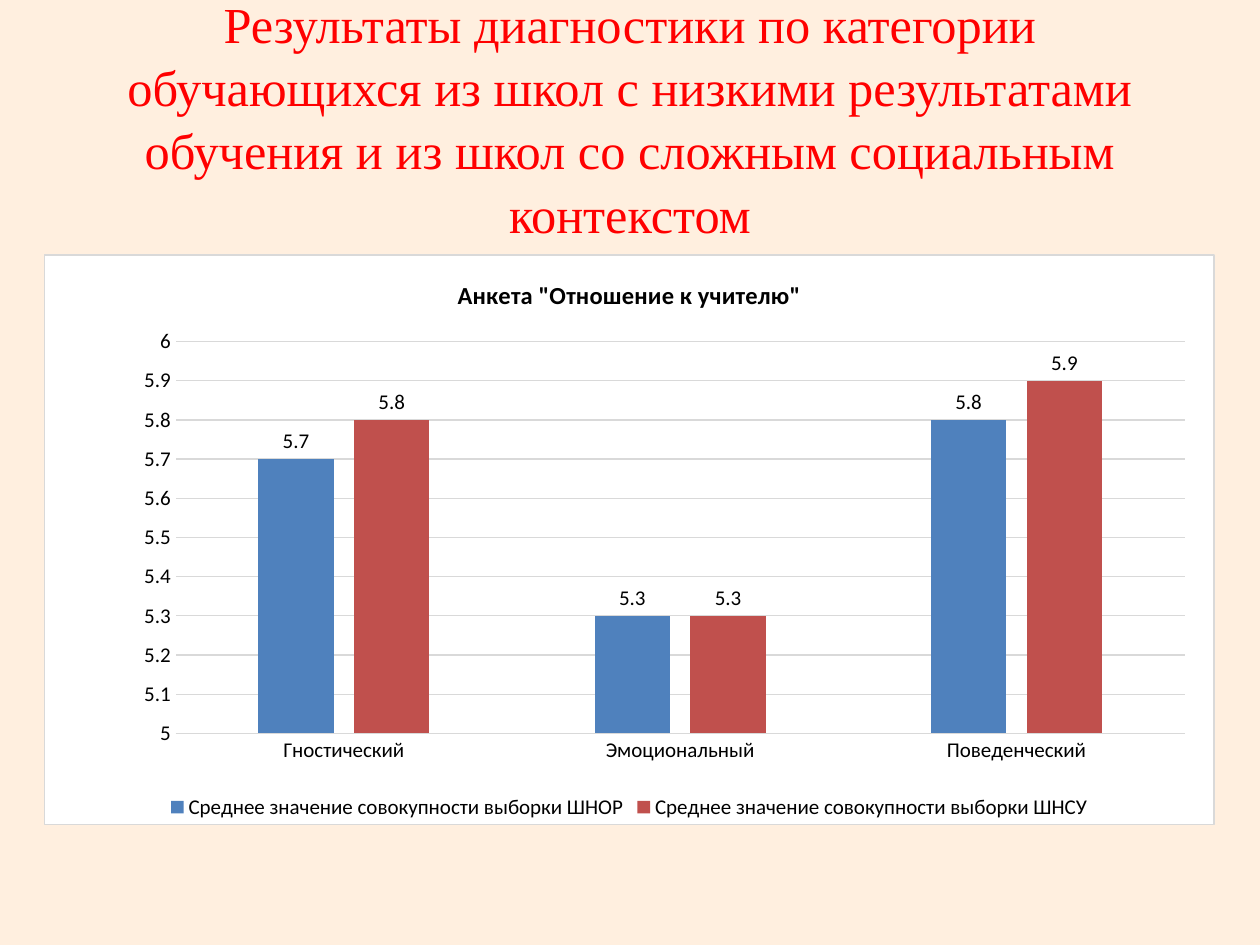
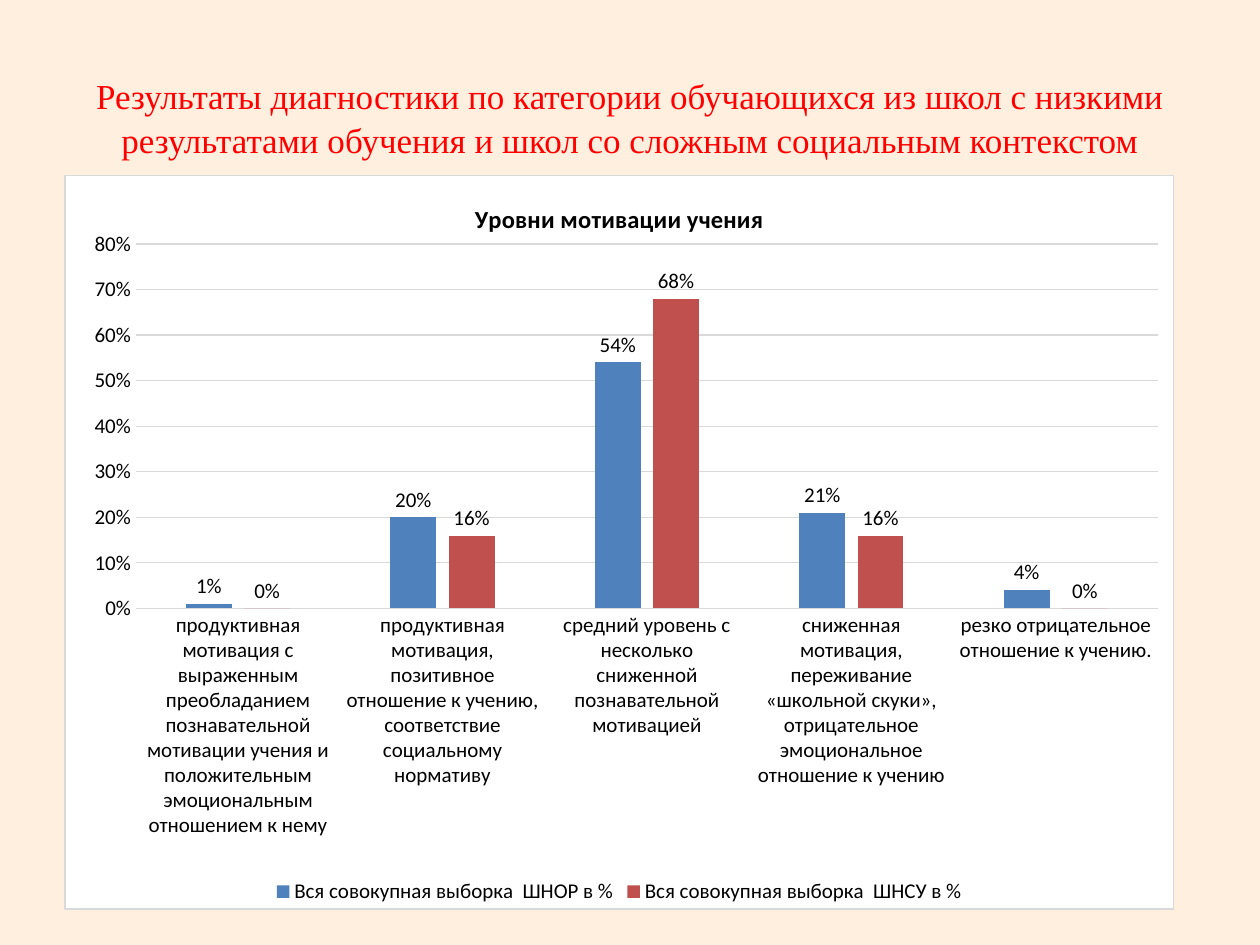
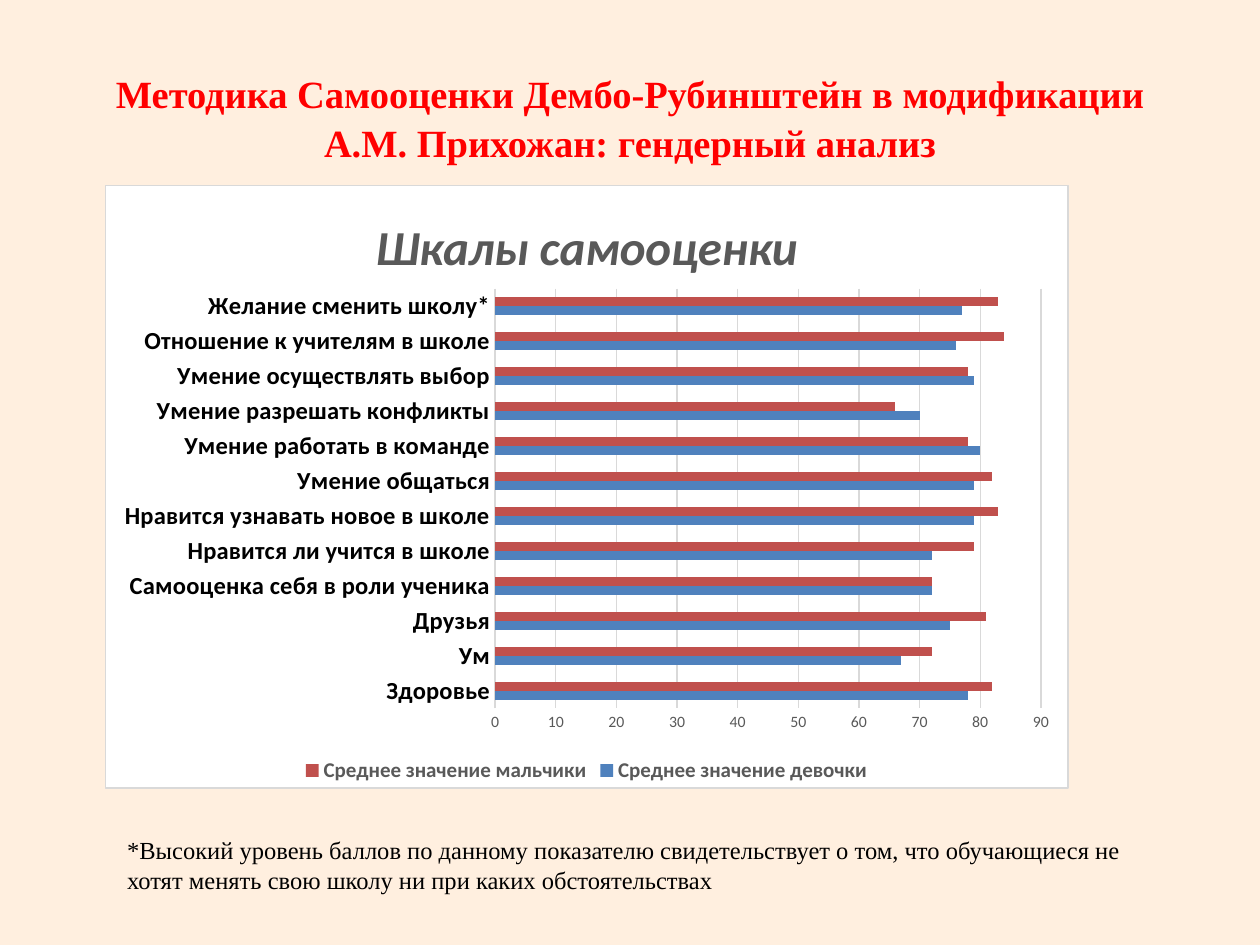
from dataclasses import dataclass

from lxml import etree
from pptx import Presentation
from pptx.chart.data import CategoryChartData
from pptx.dml.color import RGBColor
from pptx.enum import chart as kinds, text
from pptx.util import Pt

CHART_NS = "http://schemas.openxmlformats.org/drawingml/2006/chart"
DRAW_NS = "http://schemas.openxmlformats.org/drawingml/2006/main"


@dataclass(frozen=True)
class Theme:
    background: str = "FFEFDF"
    heading: str = "FF0000"
    ink: str = "000000"
    muted: str = "595959"
    rule: str = "D9D9D9"
    panel: str = "FFFFFF"
    series: tuple = ("4F81BD", "C0504D")
    text_font: str = "Times New Roman"
    chart_font: str = "Calibri"
    rule_width: float = 0.75
    long_heading: float = 28.8
    heading_small: float = 20
    heading_bold: float = 22
    note: float = 14
    chart_title: float = 14
    big_chart_title: float = 28
    chart_text: float = 12
    scale_names: float = 14
    small_ticks: float = 9


THEME = Theme()


def style(font, size, color=THEME.ink, name=THEME.chart_font, bold=False, italic=False):
    font.name, font.size = name, Pt(size)
    font.bold, font.italic = bold, italic
    font.color.rgb = RGBColor.from_string(color)


def add_slide(deck):
    slide = deck.slides.add_slide(deck.slide_layouts[6])
    fill = slide.background.fill
    fill.solid()
    fill.fore_color.rgb = RGBColor.from_string(THEME.background)
    return slide


def add_text(slide, box, words, size, color=THEME.ink, bold=False):
    frame = slide.shapes.add_textbox(*map(Pt, box)).text_frame
    frame.word_wrap = True
    paragraph = frame.paragraphs[0]
    run = paragraph.add_run()
    run.text = words
    style(run.font, size, color, THEME.text_font, bold)
    return frame


def add_heading(slide, words, size, bold=False):
    frame = add_text(slide, (36, 21.6, 648, 90), words, size, THEME.heading, bold)
    frame.vertical_anchor = text.MSO_ANCHOR.MIDDLE
    frame.paragraphs[0].alignment = text.PP_ALIGN.CENTER
    frame.paragraphs[0].line_spacing = 1.05


def rule_line(line):
    line.color.rgb = RGBColor.from_string(THEME.rule)
    line.width = Pt(THEME.rule_width)


def frame_chart(chart):
    """White panel with a thin border behind the whole chart."""
    panel = etree.fromstring(
        f'<c:spPr xmlns:c="{CHART_NS}" xmlns:a="{DRAW_NS}">'
        f'<a:solidFill><a:srgbClr val="{THEME.panel}"/></a:solidFill>'
        f'<a:ln w="{Pt(THEME.rule_width)}"><a:solidFill><a:srgbClr val="{THEME.rule}"/>'
        "</a:solidFill></a:ln></c:spPr>")
    chart.element.find(f"{{{CHART_NS}}}chart").addnext(panel)


def place_plot(chart, place):
    """Fix the inner plot area, as fractions of the chart."""
    area = chart.element.find(f".//{{{CHART_NS}}}plotArea")
    for old in area.findall(f"{{{CHART_NS}}}layout"):
        area.remove(old)
    parts = '<c:layoutTarget val="inner"/><c:xMode val="edge"/><c:yMode val="edge"/>'
    parts += "".join(f'<c:{key} val="{value}"/>' for key, value in zip("xywh", place))
    area.insert(0, etree.fromstring(
        f'<c:layout xmlns:c="{CHART_NS}"><c:manualLayout>{parts}</c:manualLayout></c:layout>'))


def add_bars(slide, kind, box, title, categories, series, scale, plot_place,
             number_format="General", gap=219, overlap=-27):
    data = CategoryChartData()
    data.categories = categories
    for name, values in series:
        data.add_series(name, values)
    chart = slide.shapes.add_chart(kind, *map(Pt, box), data).chart
    style(chart.font, THEME.chart_text)
    frame_chart(chart)
    place_plot(chart, plot_place)

    # Title and legend
    chart.has_title = True
    run = chart.chart_title.text_frame.paragraphs[0].add_run()
    run.text = title
    style(run.font, THEME.chart_title, bold=True)
    chart.has_legend = True
    chart.legend.position = kinds.XL_LEGEND_POSITION.BOTTOM
    chart.legend.include_in_layout = False

    # Axes
    for axis in (chart.category_axis, chart.value_axis):
        axis.major_tick_mark = axis.minor_tick_mark = kinds.XL_TICK_MARK.NONE
    rule_line(chart.category_axis.format.line)
    values_axis = chart.value_axis
    values_axis.minimum_scale, values_axis.maximum_scale, values_axis.major_unit = scale
    values_axis.format.line.fill.background()
    values_axis.has_major_gridlines = True
    rule_line(values_axis.major_gridlines.format.line)
    values_axis.tick_labels.number_format = number_format
    values_axis.tick_labels.number_format_is_linked = False

    # Bars
    plot = chart.plots[0]
    plot.gap_width, plot.overlap, plot.vary_by_categories = gap, overlap, False
    for bars, color in zip(plot.series, THEME.series):
        bars.invert_if_negative = False
        bars.format.fill.solid()
        bars.format.fill.fore_color.rgb = RGBColor.from_string(color)
    return chart


def add_labels(chart, number_format="General"):
    for bars in chart.plots[0].series:
        labels = bars.data_labels
        labels.show_value = True
        labels.position = kinds.XL_LABEL_POSITION.OUTSIDE_END
        labels.number_format = number_format
        labels.number_format_is_linked = False


def teacher_slide(deck):
    slide = add_slide(deck)
    add_heading(slide, "Результаты диагностики по категории обучающихся из школ с низкими "
                "результатами обучения и из школ со сложным социальным контекстом",
                THEME.long_heading)
    sample = "Среднее значение совокупности выборки "
    chart = add_bars(
        slide, kinds.XL_CHART_TYPE.COLUMN_CLUSTERED, (25.2, 145.4, 668.9, 326.2),
        'Анкета "Отношение к учителю"',
        ["Гностический", "Эмоциональный", "Поведенческий"],
        [(sample + "ШНОР", (5.7, 5.3, 5.8)), (sample + "ШНСУ", (5.8, 5.3, 5.9))],
        (5, 6, 0.1), (0.112, 0.152, 0.863, 0.688))
    add_labels(chart)


def motivation_slide(deck):
    slide = add_slide(deck)
    add_heading(slide, "Результаты диагностики по категории обучающихся из школ с низкими "
                "результатами обучения и школ со сложным социальным контекстом",
                THEME.heading_small)
    levels = [
        "продуктивная мотивация с выраженным преобладанием познавательной мотивации "
        "учения и положительным эмоциональным отношением к нему",
        "продуктивная мотивация, позитивное отношение к учению, соответствие "
        "социальному нормативу",
        "средний уровень с несколько сниженной познавательной мотивацией",
        "сниженная мотивация, переживание «школьной скуки», отрицательное "
        "эмоциональное отношение к учению",
        "резко отрицательное отношение к учению.",
    ]
    sample = "Вся совокупная выборка  "
    chart = add_bars(
        slide, kinds.XL_CHART_TYPE.COLUMN_CLUSTERED, (36.7, 100.1, 634.3, 419.8),
        "Уровни мотивации учения", levels,
        [(sample + "ШНОР в %", (0.01, 0.2, 0.54, 0.21, 0.04)),
         (sample + "ШНСУ в %", (0, 0.16, 0.68, 0.16, 0))],
        (0, 0.8, 0.1), (0.064, 0.093, 0.922, 0.497), number_format="0%")
    add_labels(chart, "0%")


def self_esteem_slide(deck):
    slide = add_slide(deck)
    add_heading(slide, "Методика Самооценки Дембо-Рубинштейн в модификации "
                "А.М. Прихожан: гендерный анализ", THEME.heading_bold, bold=True)
    add_text(slide, (65.5, 473.8, 583.9, 41),
             "*Высокий уровень баллов по данному показателю свидетельствует о том, что "
             "обучающиеся не хотят менять свою школу ни при каких обстоятельствах",
             THEME.note)
    scores = [  # scale, girls, boys
        ("Здоровье", 78, 82),
        ("Ум", 67, 72),
        ("Друзья", 75, 81),
        ("Самооценка себя в роли ученика", 72, 72),
        ("Нравится ли учится в школе", 72, 79),
        ("Нравится узнавать новое в школе", 79, 83),
        ("Умение общаться", 79, 82),
        ("Умение работать в команде", 80, 78),
        ("Умение разрешать конфликты", 70, 66),
        ("Умение осуществлять выбор", 79, 78),
        ("Отношение к учителям в школе", 76, 84),
        ("Желание сменить школу*", 77, 83),
    ]
    scales, girls, boys = zip(*scores)
    chart = add_bars(
        slide, kinds.XL_CHART_TYPE.BAR_CLUSTERED, (59.8, 105.8, 550.8, 344.9),
        "Шкалы самооценки", scales,
        [("Среднее значение девочки", girls), ("Среднее значение мальчики", boys)],
        (0, 90, 10), (0.405, 0.171, 0.567, 0.697), gap=182, overlap=0)
    title_run = chart.chart_title.text_frame.paragraphs[0].runs[0]
    style(title_run.font, THEME.big_chart_title, THEME.muted, bold=True, italic=True)
    style(chart.category_axis.tick_labels.font, THEME.scale_names, bold=True)
    style(chart.value_axis.tick_labels.font, THEME.small_ticks, THEME.muted)
    style(chart.legend.font, THEME.chart_text, THEME.muted, bold=True)


def main():
    deck = Presentation()
    deck.slide_width, deck.slide_height = Pt(720), Pt(540)
    teacher_slide(deck)
    motivation_slide(deck)
    self_esteem_slide(deck)
    deck.save("out.pptx")


if __name__ == "__main__":
    main()
